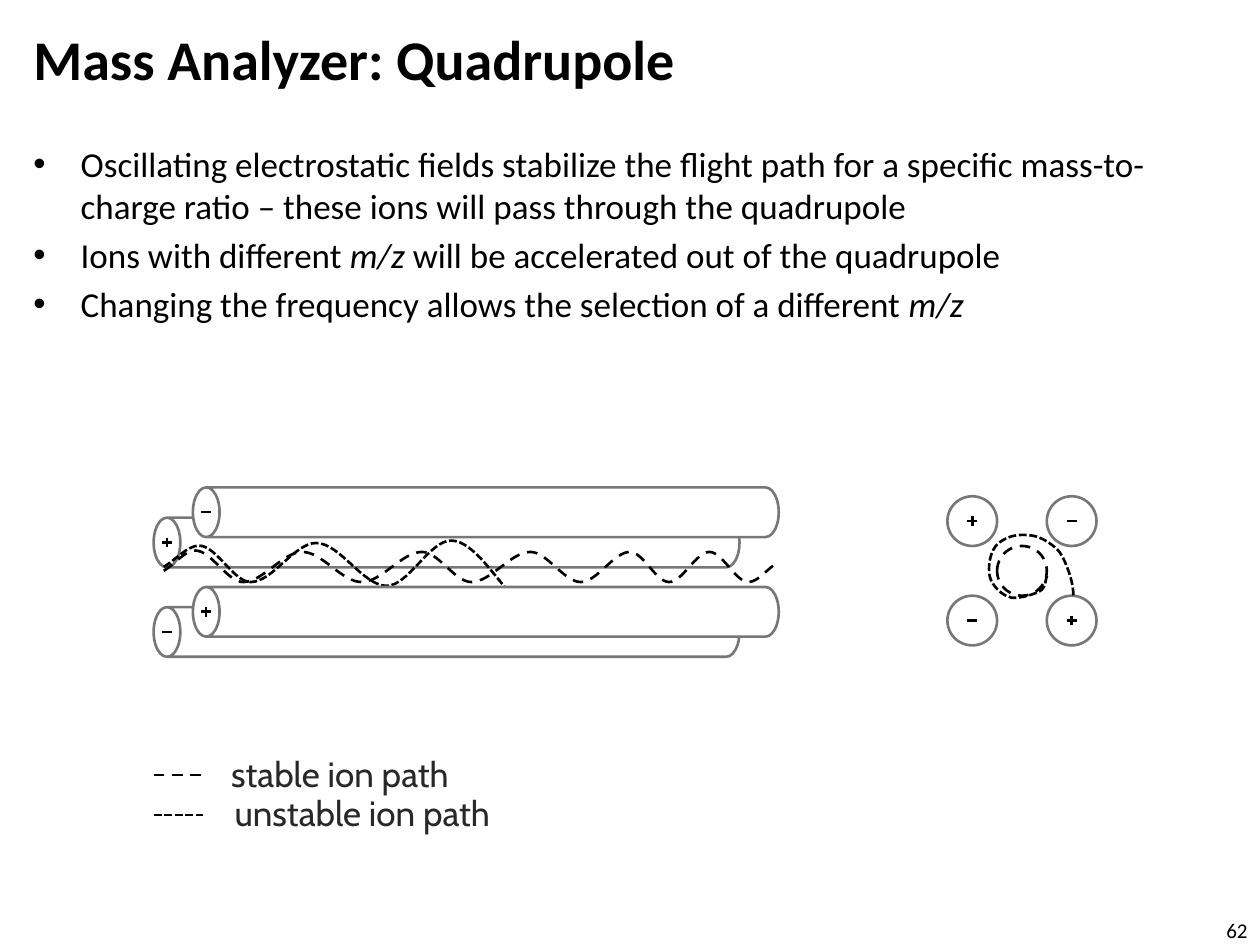
from dataclasses import dataclass
from itertools import pairwise

from pptx import Presentation
from pptx.dml.color import RGBColor
from pptx.enum.dml import MSO_LINE
from pptx.enum.shapes import MSO_CONNECTOR, MSO_SHAPE
from pptx.enum.text import MSO_ANCHOR, MSO_AUTO_SIZE, PP_ALIGN
from pptx.oxml.xmlchemy import OxmlElement
from pptx.util import Pt


@dataclass(frozen=True)
class Theme:
    """Colours, fonts and sizes of the slide."""
    ink: RGBColor = RGBColor(0, 0, 0)
    legend: RGBColor = RGBColor(0x28, 0x28, 0x28)
    metal: RGBColor = RGBColor(0x77, 0x77, 0x77)
    white: RGBColor = RGBColor(255, 255, 255)
    font: str = "Calibri"
    legend_font: str = "Cabin"
    title_size: float = 32
    body_size: float = 20
    number_size: float = 12
    stroke: float = 1.5


THEME = Theme()
STABLE, UNSTABLE = MSO_LINE.DASH, MSO_LINE.SQUARE_DOT
DIAMETER, ROD_LENGTH, CAP = 28.4, 334.8, 0.537
SIGN_ARM = 2.8

BULLETS = [
    [("Oscillating electrostatic fields stabilize the flight path for a specific "
      "mass-to-charge ratio – these ions will pass through the quadrupole", False)],
    [("Ions with different ", False), ("m/z ", True),
     ("will be accelerated out of the quadrupole", False)],
    [("Changing the frequency allows the selection of a different ", False), ("m/z", True)],
]
STABLE_TURNS = [
    (93.6, 326.2), (111.6, 314.6), (139, 332.6), (172.8, 315.4), (206.6, 332.6),
    (241.2, 315.4), (269.3, 332.6), (303.1, 315.4), (331.9, 332.6), (360, 315.4),
    (382.3, 332.6), (405.4, 315.4), (427.7, 332.6), (445, 321.1),
]
UNSTABLE_TURNS = [
    (93.6, 324), (113.8, 311.8), (143.3, 332.6), (180.7, 310.3), (221, 334.8),
    (257.8, 308.9), (297.4, 345.6),
]
SPIRAL = [
    (598.3, 329), (597.6, 330.5), (597.6, 334.8), (595.4, 337),
    (594, 338.4), (589.7, 339.8), (586.8, 340.6),
    (583.2, 341.3), (578.9, 342.7), (575.3, 340.6),
    (571.7, 339.1), (567.4, 334.8), (565.9, 330.5),
    (564.5, 326.2), (565.2, 319), (567.4, 314.6),
    (568.8, 311), (573.1, 308.2), (577.4, 306.7),
    (581.8, 305.3), (587.5, 305.3), (592.6, 306.7),
    (596.9, 308.2), (601.2, 311), (604.8, 314.6),
    (607.7, 318.2), (609.8, 324), (611.3, 328.3),
    (612.7, 332.6), (613.4, 337.7), (613.4, 340.6),
]


def write(slide, paragraphs, box, *, size, font=THEME.font, color=THEME.ink, bold=False,
          align=PP_ALIGN.LEFT, anchor=MSO_ANCHOR.TOP, wrap=True, bullet=False):
    """Write paragraphs of (text, italic) runs in a text box."""
    frame = slide.shapes.add_textbox(*map(Pt, box)).text_frame
    frame.word_wrap = wrap
    frame.auto_size = MSO_AUTO_SIZE.NONE if wrap else MSO_AUTO_SIZE.SHAPE_TO_FIT_TEXT
    frame.vertical_anchor = anchor
    for index, runs in enumerate(paragraphs):
        paragraph = frame.add_paragraph() if index else frame.paragraphs[0]
        paragraph.alignment = align
        if bullet:
            add_bullet(paragraph)
        for text, italic in runs:
            run = paragraph.add_run()
            run.text = text
            run.font.name, run.font.size = font, Pt(size)
            run.font.bold, run.font.italic = bold, italic
            run.font.color.rgb = color


def add_bullet(paragraph):
    """Give a paragraph a hanging bullet and space above."""
    paragraph.space_before = Pt(THEME.body_size * 0.2)
    properties = paragraph._p.get_or_add_pPr()
    properties.set("marL", str(Pt(27)))
    properties.set("indent", str(-Pt(27)))
    typeface = OxmlElement("a:buFont")
    typeface.set("typeface", "Arial")
    mark = OxmlElement("a:buChar")
    mark.set("char", "•")
    properties.extend([typeface, mark])


def outline(line, color=THEME.ink, dash=None):
    """Set the stroke of a shape or line."""
    line.color.rgb = color
    line.width = Pt(THEME.stroke)
    if dash:
        line.dash_style = dash


def stroke(slide, start, end, dash=None):
    """Draw a straight line."""
    segment = slide.shapes.add_connector(MSO_CONNECTOR.STRAIGHT, *map(Pt, (*start, *end)))
    outline(segment.line, dash=dash)
    segment._element.spPr.append(OxmlElement("a:effectLst"))


def charge(slide, x, y, positive):
    """Draw a plus or minus sign around a centre."""
    stroke(slide, (x - SIGN_ARM, y), (x + SIGN_ARM, y))
    if positive:
        stroke(slide, (x, y - SIGN_ARM), (x, y + SIGN_ARM))


def rod(slide, left, y, positive):
    """Draw a horizontal rod with its charge on the near end."""
    cylinder = slide.shapes.add_shape(
        MSO_SHAPE.CAN, Pt(left + (ROD_LENGTH - DIAMETER) / 2), Pt(y - ROD_LENGTH / 2),
        Pt(DIAMETER), Pt(ROD_LENGTH))
    cylinder.rotation = 270
    cylinder.adjustments[0] = CAP
    cylinder.shadow.inherit = False
    cylinder.fill.solid()
    cylinder.fill.fore_color.rgb = THEME.white
    outline(cylinder.line, THEME.metal)
    charge(slide, left + DIAMETER * CAP / 2, y, positive)


def ring(slide, x, y, color=THEME.metal, dash=None):
    """Draw an unfilled circle around a centre."""
    circle = slide.shapes.add_shape(
        MSO_SHAPE.OVAL, Pt(x - DIAMETER / 2), Pt(y - DIAMETER / 2), Pt(DIAMETER), Pt(DIAMETER))
    circle.shadow.inherit = False
    circle.fill.background()
    outline(circle.line, color, dash)


def curve(slide, points, dash):
    """Draw an open cubic curve from a start and triples of points."""
    start, *rest = [(Pt(x), Pt(y)) for x, y in points]
    builder = slide.shapes.build_freeform(*start)
    builder.add_line_segments(rest, close=False)
    trajectory = builder.convert_to_shape()
    steps = trajectory._element.xpath(".//a:path/a:lnTo")
    for first in range(0, len(steps), 3):
        bezier = OxmlElement("a:cubicBezTo")
        steps[first].addprevious(bezier)
        for step in steps[first:first + 3]:
            bezier.append(step[0])
            step.getparent().remove(step)
    trajectory.shadow.inherit = False
    trajectory.fill.background()
    outline(trajectory.line, dash=dash)


def wave(slide, turns, end_slope, dash):
    """Draw a curve that is level at each inner turning point."""
    slopes = [-0.6] + [0] * (len(turns) - 2) + [end_slope]
    points = [turns[0]]
    for ((x1, y1), slope1), ((x2, y2), slope2) in pairwise(zip(turns, slopes)):
        third = (x2 - x1) / 3
        points += [(x1 + third, y1 + third * slope1), (x2 - third, y2 - third * slope2), (x2, y2)]
    curve(slide, points, dash)


def side_view(slide):
    """Draw the four rods with both ion paths between them."""
    back, front = 87.8, 110.2
    rod(slide, back, 310, True)
    rod(slide, back, 361.1, False)
    rod(slide, front, 292.7, False)
    wave(slide, STABLE_TURNS, -0.5, STABLE)
    wave(slide, UNSTABLE_TURNS, 1, UNSTABLE)
    rod(slide, front, 349.6, True)


def end_view(slide):
    """Draw the rods and ion paths seen along the axis."""
    x, y = 584, 326.2
    for across in (-1, 1):
        for down in (-1, 1):
            centre = (x + across * DIAMETER, y + down * DIAMETER)
            ring(slide, *centre)
            charge(slide, *centre, positive=across == down)
    ring(slide, x, y, THEME.ink, STABLE)
    curve(slide, SPIRAL, UNSTABLE)


def legend(slide):
    """Explain the two line styles."""
    entries = [("stable ion path", STABLE, 442.8, (118.8, 426.2, 144.7, 31)),
               ("unstable ion path", UNSTABLE, 465.8, (120.2, 448.6, 167, 31))]
    for label, dash, y, box in entries:
        stroke(slide, (87.8, y), (115.9, y), dash)
        write(slide, [[(label, False)]], box, size=THEME.body_size, font=THEME.legend_font,
              color=THEME.legend, align=PP_ALIGN.RIGHT, wrap=False)


def main():
    """Build and save the slide."""
    deck = Presentation()
    deck.slide_width, deck.slide_height = Pt(720), Pt(540)
    slide = deck.slides.add_slide(deck.slide_layouts[6])
    write(slide, [[("Mass Analyzer: Quadrupole", False)]], (12, 6, 528, 54),
          size=THEME.title_size, bold=True, anchor=MSO_ANCHOR.MIDDLE)
    write(slide, BULLETS, (12, 78, 696, 426), size=THEME.body_size, bullet=True)
    side_view(slide)
    end_view(slide)
    legend(slide)
    write(slide, [[("62", False)]], (540, 523.5, 180, 16.5), size=THEME.number_size,
          align=PP_ALIGN.RIGHT, anchor=MSO_ANCHOR.MIDDLE)
    deck.save("out.pptx")


if __name__ == "__main__":
    main()
